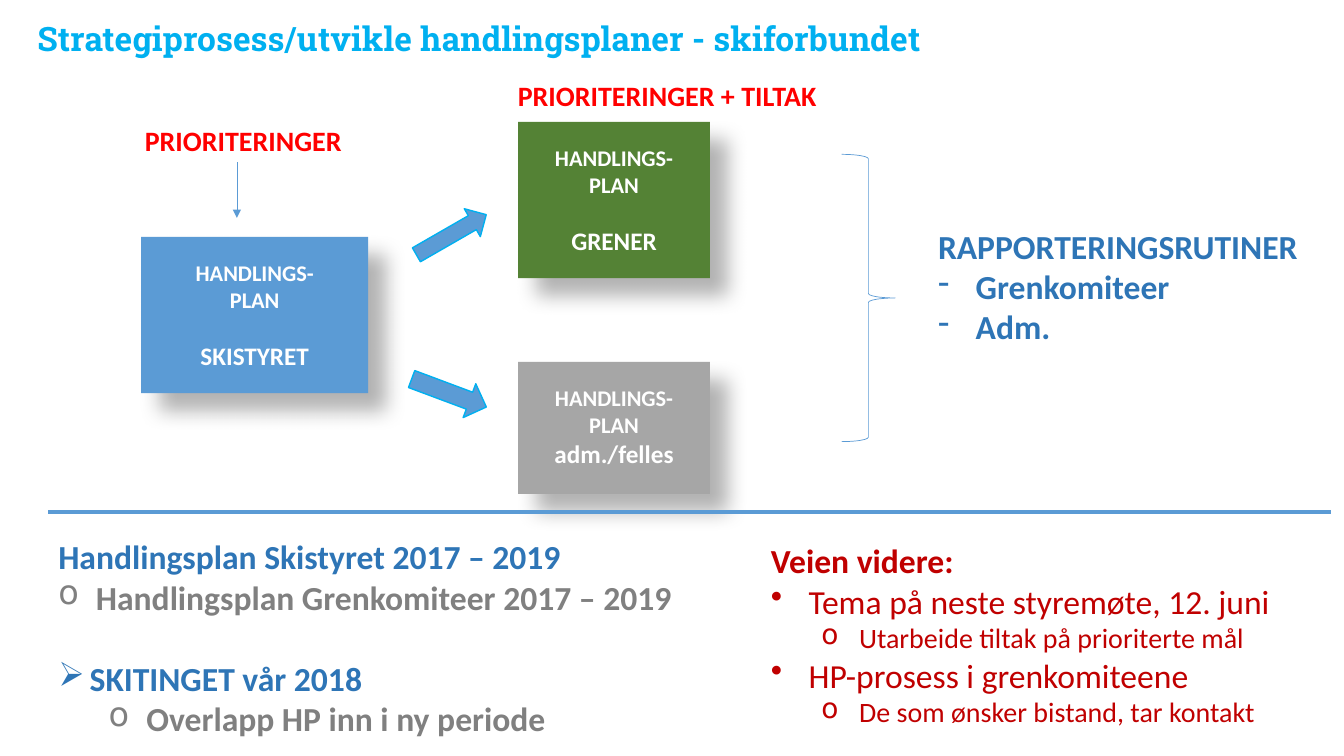
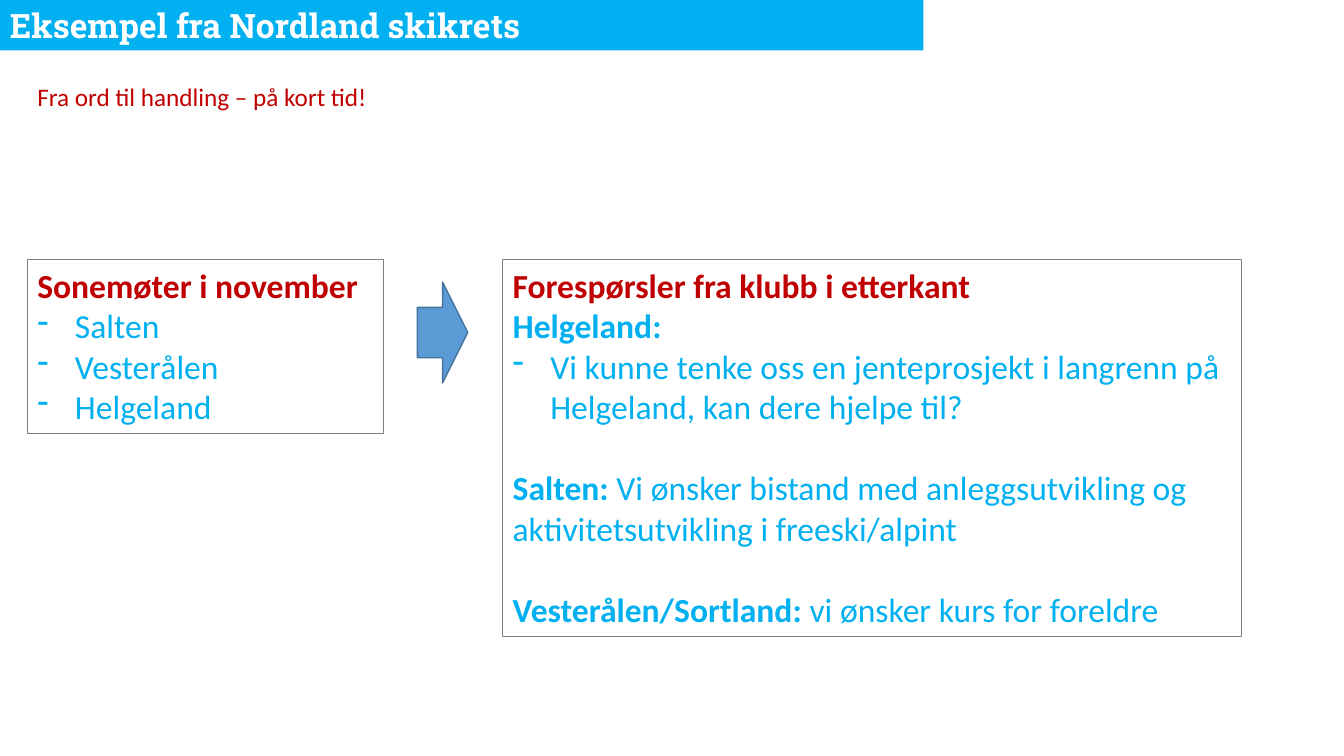
from lxml.etree import SubElement
from pptx import Presentation
from pptx.dml.color import RGBColor
from pptx.enum.shapes import MSO_CONNECTOR, MSO_SHAPE
from pptx.enum.text import MSO_ANCHOR, PP_ALIGN
from pptx.oxml.ns import qn
from pptx.util import Cm, Pt

COLORS = {
    "sky": "00B0F0", "blue": "5B9BD5", "deep blue": "2E75B6", "edge blue": "43739E",
    "green": "548235", "silver": "A6A6A6", "gray": "808080",
    "red": "FF0000", "dark red": "C00000", "white": "FFFFFF", "black": "000000",
}

TITLE = {"name": "Roboto Slab", "size": Pt(24), "bold": True, "color": "sky"}
BODY = {"name": "Calibri", "size": Pt(24), "bold": True, "color": "deep blue"}
LABEL = {**BODY, "size": Pt(20), "color": "red"}
PLAN = {**BODY, "size": Pt(16), "color": "white"}
WARNING = {**BODY, "color": "dark red"}

DASH = {"bullet": "-", "hang": 0.95}
DOT = {"bullet": "•", "hang": 0.95}
RING = {"bullet": "o", "hang": 0.95}
SUB_RING = {**RING, "level": 1, "left": 2.22}
BLANK_LINE = Pt(29.3)


def add_shape(page, kind, frame, fill=None, line=None, width=1, rotation=0):
    """Add a preset shape; without a fill or line colour that part is left off."""
    shape = page.shapes.add_shape(kind, *map(Cm, frame))
    shape.shadow.inherit = False
    shape.rotation = rotation
    if fill:
        shape.fill.solid()
        shape.fill.fore_color.rgb = RGBColor.from_string(COLORS[fill])
    else:
        shape.fill.background()
    if line:
        shape.line.color.rgb = RGBColor.from_string(COLORS[line])
        shape.line.width = Pt(width)
    else:
        shape.line.fill.background()
    return shape


def write(box, style, paragraphs, wrap=True, align=PP_ALIGN.LEFT, anchor=MSO_ANCHOR.TOP):
    """Fill a box from (spans, layout) pairs; a span is (text, changes to style)."""
    frame = box.text_frame
    frame.word_wrap = wrap
    frame.vertical_anchor = anchor
    for index, (spans, layout) in enumerate(paragraphs):
        para = frame.add_paragraph() if index else frame.paragraphs[0]
        para.alignment = align
        para.level = layout.get("level", 0)
        if "gap" in layout:
            para.space_before = layout["gap"]
        if "bullet" in layout:
            properties = para._p.get_or_add_pPr()
            properties.set("marL", str(Cm(layout.get("left", layout["hang"]))))
            properties.set("indent", str(-Cm(layout["hang"])))
            SubElement(properties, qn("a:buChar"), char=layout["bullet"])
        for text, changes in spans:
            span = para.add_run()
            span.text = text
            for name, value in {**style, **changes}.items():
                if name == "color":
                    span.font.color.rgb = RGBColor.from_string(COLORS[value])
                else:
                    setattr(span.font, name, value)


deck = Presentation()
deck.slide_width, deck.slide_height = Cm(33.87), Cm(19.05)
blank = deck.slide_layouts[6]

# Slide 1: the strategy process
page = deck.slides.add_slide(blank)
title = page.shapes.add_textbox(*map(Cm, (0.69, 0.33, 28.19, 1.27)))
write(title, TITLE, [([("Strategiprosess/utvikle handlingsplaner - skiforbundet", {})], {})])

plans = [
    ("SKISTYRET", (3.56, 5.97, 5.72, 3.94), "blue", Pt(19.5)),
    ("GRENER", (13.06, 3.07, 4.83, 3.94), "green", Pt(19.5)),
    ("adm./felles", (13.06, 9.12, 4.83, 3.33), "silver", Pt(0)),
]
for owner, frame, color, gap in plans:
    plan = add_shape(page, MSO_SHAPE.RECTANGLE, frame, color)
    effects = plan._element.spPr.find(qn("a:effectLst"))
    shadow = SubElement(effects, qn("a:outerShdw"), blurRad=str(Pt(15)), dist=str(Pt(18)),
                        dir="2700000", algn="tl", rotWithShape="0")
    shade = SubElement(shadow, qn("a:srgbClr"), val=COLORS["black"])
    SubElement(shade, qn("a:alpha"), val="30000")
    plan.text_frame.margin_top = Cm(0.56)
    write(plan, PLAN, [
        ([("HANDLINGS-", {})], {}),
        ([("PLAN", {})], {}),
        ([(owner, {"size": Pt(18)})], {"gap": gap}),
    ], align=PP_ALIGN.CENTER)

for text, frame in [
    ("PRIORITERINGER", (3.4, 3, 5.51, 1.12)),
    ("PRIORITERINGER + TILTAK", (12.8, 1.85, 8.1, 1.12)),
]:
    label = page.shapes.add_textbox(*map(Cm, frame))
    write(label, LABEL, [([(text, {})], {})], wrap=False)

for frame, rotation in [((10.36, 5.51, 2.03, 0.81), 330.1), ((10.31, 9.45, 2.01, 0.91), 20.5)]:
    add_shape(page, MSO_SHAPE.RIGHT_ARROW, frame, "blue", "sky", rotation=rotation)
add_shape(page, MSO_SHAPE.RIGHT_BRACE, (21.21, 3.89, 1.35, 7.24), line="blue", width=0.5)

for ends, width, arrowhead in [
    ((5.97, 4.09, 5.97, 5.49), 0.5, True),
    ((1.22, 12.9, 33.55, 12.9), 3, False),
]:
    connector = page.shapes.add_connector(MSO_CONNECTOR.STRAIGHT, *map(Cm, ends))
    connector.line.color.rgb = RGBColor.from_string(COLORS["blue"])
    connector.line.width = Pt(width)
    if arrowhead:
        SubElement(connector.line._get_or_add_ln(), qn("a:tailEnd"), type="triangle")
    SubElement(connector._element.spPr, qn("a:effectLst"))

gray = {"color": "gray"}
schedule = page.shapes.add_textbox(*map(Cm, (1.22, 13.39, 16.1, 5.38)))
write(schedule, BODY, [
    ([("Handlingsplan Skistyret 2017 – 2019", {})], {}),
    ([("Handlingsplan Grenkomiteer 2017 – 2019", gray)], RING),
    ([("SKITINGET vår 2018", {})], {"bullet": "➢", "hang": 0.79, "gap": BLANK_LINE}),
    ([("Overlapp HP inn i ny periode", gray)], SUB_RING),
])

reporting = page.shapes.add_textbox(*map(Cm, (23.39, 5.56, 9.68, 3.33)))
write(reporting, BODY, [
    ([("RAPPORTERINGSRUTINER", {})], {}),
    ([("Grenkomiteer", {})], DASH),
    ([("Adm.", {})], DASH),
], wrap=False)

plain = {"bold": False}
small = {"bold": False, "size": Pt(20)}
next_steps = page.shapes.add_textbox(*map(Cm, (19.18, 13.49, 14.6, 5.05)))
write(next_steps, WARNING, [
    ([("Veien videre:", {})], {}),
    ([("Tema på neste styremøte, 12. juni", plain)], DOT),
    ([("Utarbeide tiltak på prioriterte mål", small)], SUB_RING),
    ([("HP-prosess i grenkomiteene", plain)], DOT),
    ([("De som ønsker bistand, tar kontakt", small)], SUB_RING),
])

# Slide 2: the regional example
page = deck.slides.add_slide(blank)
band = add_shape(page, MSO_SHAPE.RECTANGLE, (0, 0, 23.27, 1.27), "sky")
write(band, {**TITLE, "color": "white"}, [([("Eksempel fra Nordland skikrets", {})], {})],
      anchor=MSO_ANCHOR.MIDDLE)

motto = page.shapes.add_textbox(*map(Cm, (0.69, 1.93, 8.92, 1.02)))
write(motto, {**WARNING, "bold": False, "size": Pt(18)},
      [([("Fra ord til handling – på kort tid!", {})], {})], wrap=False)

sky = {"color": "sky"}
plain_sky = {"color": "sky", "bold": False}
meetings = add_shape(page, MSO_SHAPE.RECTANGLE, (0.69, 6.55, 8.97, 4.37), line="gray", width=0.75)
write(meetings, WARNING, [
    ([("Sonemøter i november", {})], {}),
    *[([(zone, plain_sky)], DASH) for zone in ("Salten", "Vesterålen", "Helgeland")],
])

add_shape(page, MSO_SHAPE.RIGHT_ARROW, (10.52, 7.11, 1.27, 2.54), "blue", "edge blue")

requests = add_shape(page, MSO_SHAPE.RECTANGLE, (12.67, 6.55, 18.62, 9.5), line="gray", width=0.75)
write(requests, WARNING, [
    ([("Forespørsler fra klubb i etterkant", {})], {}),
    ([("Helgeland:", sky)], {}),
    ([("Vi kunne tenke oss en jenteprosjekt i langrenn på Helgeland, kan dere hjelpe til?",
       plain_sky)], DASH),
    ([("Salten: ", sky),
      ("Vi ønsker bistand med anleggsutvikling og aktivitetsutvikling i freeski/alpint",
       plain_sky)], {"gap": BLANK_LINE}),
    ([("Vesterålen/Sortland: ", sky), ("vi ønsker kurs for foreldre", plain_sky)],
     {"gap": BLANK_LINE}),
])

deck.save("out.pptx")
